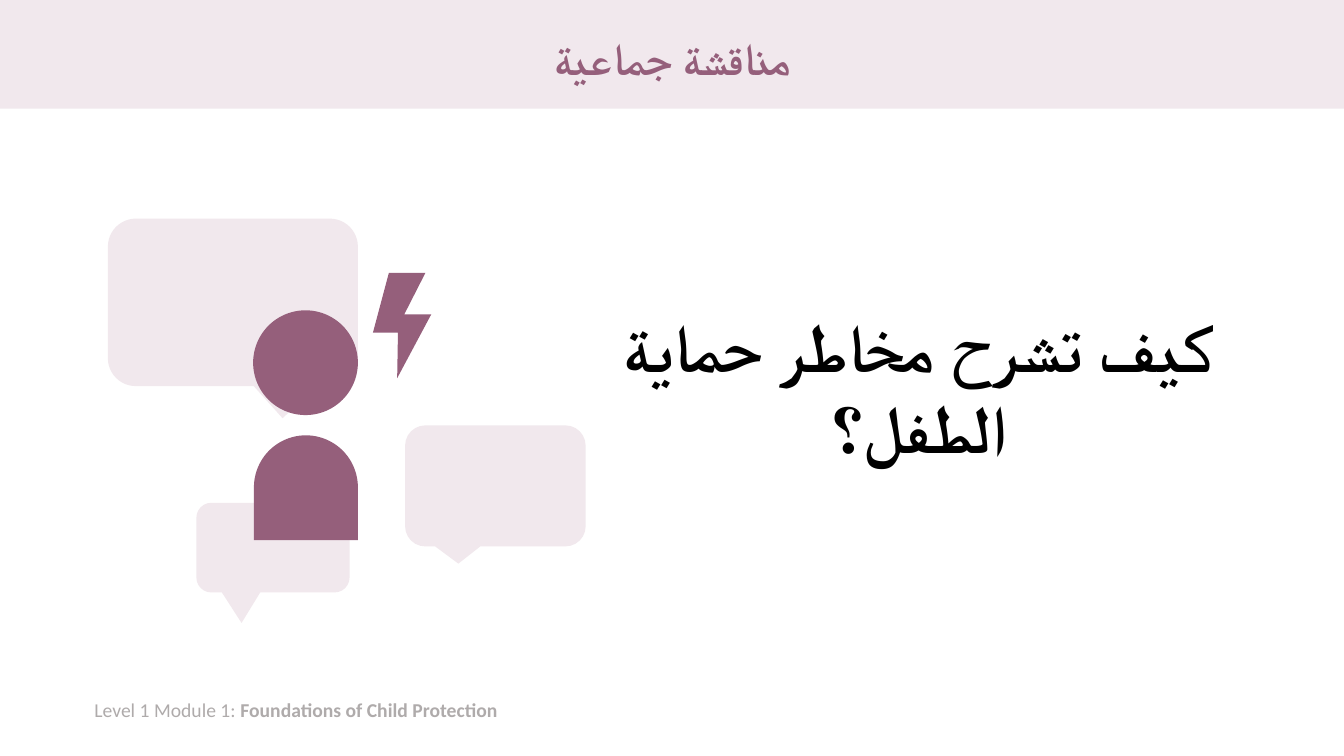
from dataclasses import dataclass

from lxml.etree import SubElement
from pptx import Presentation
from pptx.dml.color import RGBColor
from pptx.enum.shapes import MSO_SHAPE
from pptx.enum.text import MSO_ANCHOR, MSO_AUTO_SIZE, PP_ALIGN
from pptx.oxml.ns import qn
from pptx.util import Cm, Pt


@dataclass(frozen=True)
class Theme:
    font: str = "Calibri"
    plum: RGBColor = RGBColor(0x95, 0x5F, 0x7B)
    blush: RGBColor = RGBColor(0xF1, 0xE8, 0xED)
    black: RGBColor = RGBColor(0, 0, 0)
    gray: RGBColor = RGBColor(0xAF, 0xAB, 0xAB)
    title_size: Pt = Pt(32)
    question_size: Pt = Pt(48)
    footer_size: Pt = Pt(14)


theme = Theme()


def paint(shape, color):
    shape.shadow.inherit = False
    shape.fill.solid()
    shape.fill.fore_color.rgb = color
    shape.line.fill.background()


def add_run(paragraph, text, color, **font_values):
    run = paragraph.add_run()
    run.text = text
    run.font.color.rgb = color
    for name, value in {"name": theme.font, **font_values}.items():
        setattr(run.font, name, value)
    # Arabic letters take the complex-script font
    SubElement(run.font._element, qn("a:cs")).set("typeface", theme.font)


presentation = Presentation()
presentation.slide_width, presentation.slide_height = Cm(33.87), Cm(19.05)
slide = presentation.slides.add_slide(presentation.slide_layouts[5])
shapes = slide.shapes
title = shapes.title

# Header band, placed behind the title
band = shapes.add_shape(MSO_SHAPE.RECTANGLE, 0, 0, presentation.slide_width, Cm(2.74))
paint(band, theme.blush)
title._element.addprevious(band._element)

# Footer
footer = shapes.add_textbox(Cm(2.13), Cm(17.45), Cm(28.83), Cm(0.86))
footer.text_frame.word_wrap = True
for text, bold in (("Level 1 Module 1: ", False), ("Foundations of Child Protection", True)):
    add_run(footer.text_frame.paragraphs[0], text, theme.gray, size=theme.footer_size, bold=bold)

# Title and question, both right-to-left and centred
title.left, title.top, title.width, title.height = Cm(2.34), Cm(0.33), Cm(29.21), Cm(2.41)
question = shapes.add_textbox(Cm(15.16), Cm(3.4), Cm(15.98), Cm(12.67))
frame_format = {
    "word_wrap": True,
    "auto_size": MSO_AUTO_SIZE.NONE,
    "vertical_anchor": MSO_ANCHOR.MIDDLE,
}
for shape, text, color, size, spacing in (
    (title, "مناقشة جماعية", theme.plum, theme.title_size, 0.9),
    (question, "كيف تشرح مخاطر حماية الطفل؟", theme.black, theme.question_size, 1.0),
):
    for name, value in frame_format.items():
        setattr(shape.text_frame, name, value)
    paragraph = shape.text_frame.paragraphs[0]
    paragraph.alignment = PP_ALIGN.CENTER
    paragraph.line_spacing = spacing
    paragraph._element.get_or_add_pPr().set("rtl", "1")
    add_run(paragraph, text, color, size=size, bold=True)

# Speech bubbles, then the person in front of them
callout = MSO_SHAPE.ROUNDED_RECTANGULAR_CALLOUT
for kind, color, left, top, width, height, adjustments in (
    (callout, theme.blush, 2.72, 5.51, 6.3, 4.22, (0.199, 0.692, 0.167)),
    (callout, theme.blush, 10.21, 10.72, 4.55, 3.05, (-0.205, 0.642, 0.167)),
    (callout, theme.blush, 4.95, 12.67, 3.86, 2.26, (-0.205, 0.84, 0.167)),
    (MSO_SHAPE.ROUND_2_SAME_RECTANGLE, theme.plum, 6.4, 10.97, 2.62, 2.64, (0.5, 0)),
    (MSO_SHAPE.OVAL, theme.plum, 6.38, 7.82, 2.64, 2.64, ()),
):
    shape = shapes.add_shape(kind, Cm(left), Cm(top), Cm(width), Cm(height))
    for index, value in enumerate(adjustments):
        shape.adjustments[index] = value
    paint(shape, color)

# Lightning bolt
bolt_points = [
    (Cm(x), Cm(y))
    for x, y in (
        (9.8, 6.88), (10.72, 6.88), (10.19, 7.92), (10.87, 7.92),
        (10.01, 9.53), (10.03, 8.38), (9.4, 8.38),
    )
]
builder = shapes.build_freeform(*bolt_points[0])
builder.add_line_segments(bolt_points[1:], close=True)
paint(builder.convert_to_shape(), theme.plum)

presentation.save("out.pptx")
